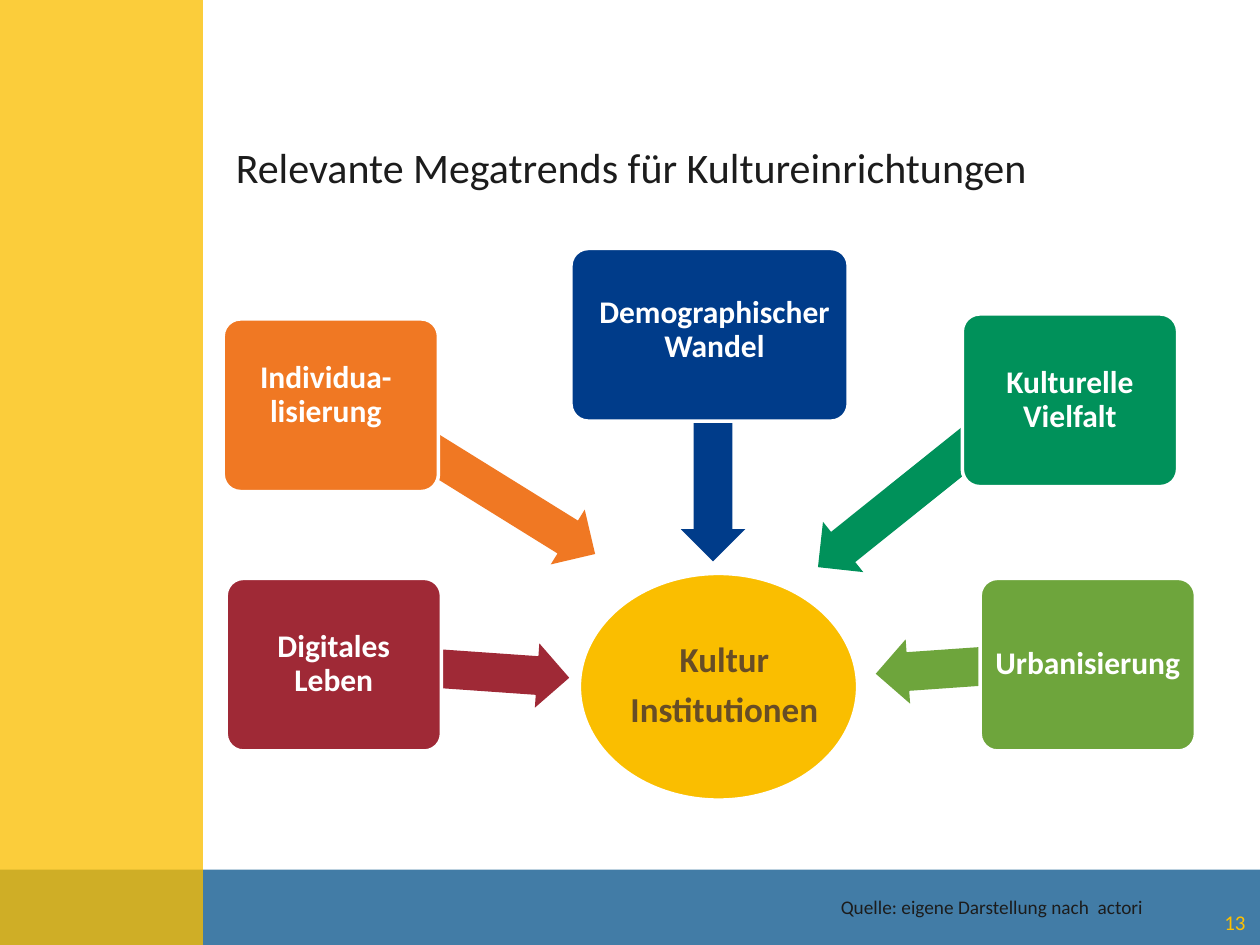
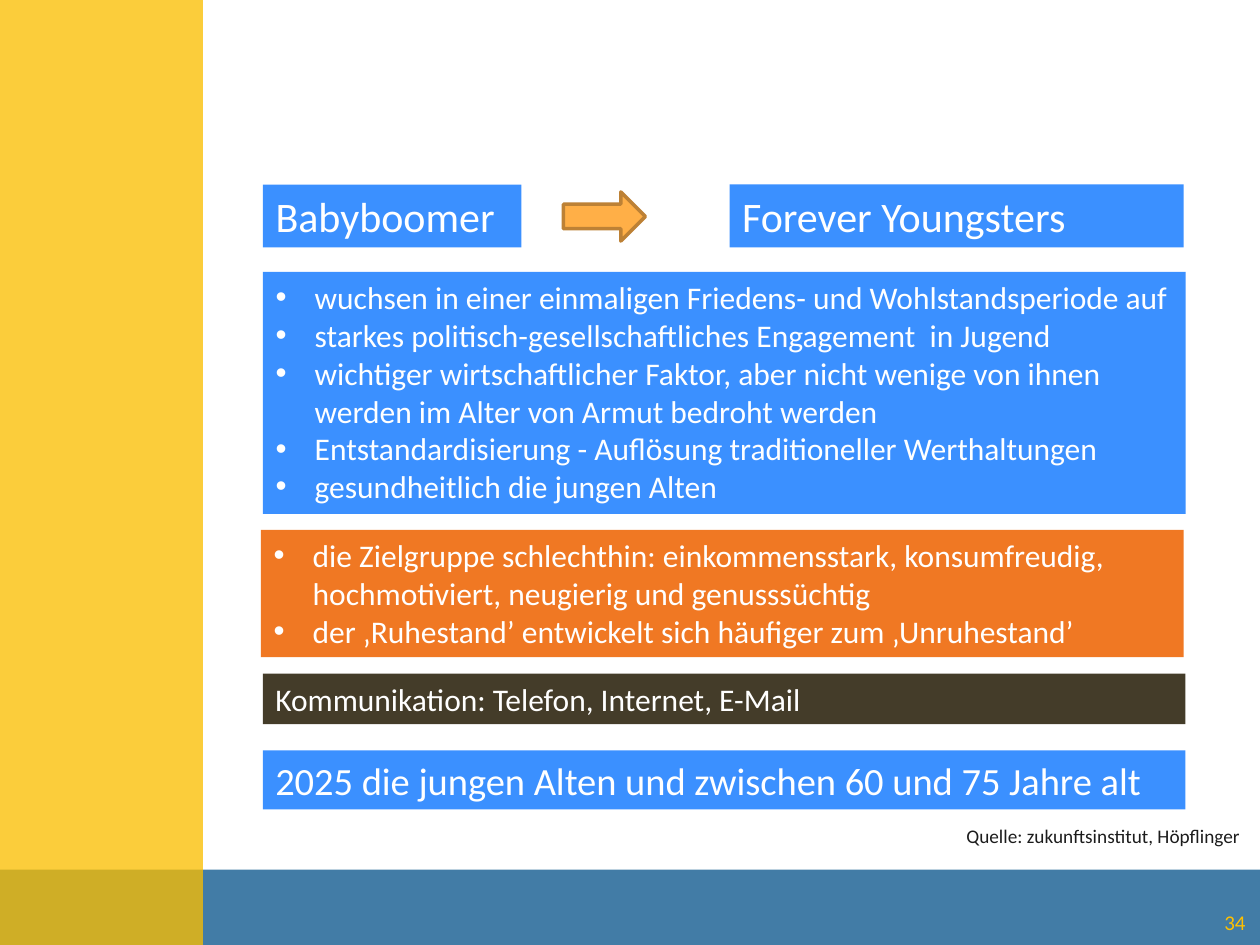
"""Build two German slides on megatrends and the baby boomer generation."""
from lxml import etree
from pptx import Presentation
from pptx.dml.color import RGBColor
from pptx.enum.shapes import MSO_SHAPE
from pptx.enum.text import MSO_ANCHOR, MSO_AUTO_SIZE, PP_ALIGN
from pptx.oxml.ns import qn
from pptx.util import Cm, Pt

RECTANGLE, ROUNDED, ELLIPSE = MSO_SHAPE.RECTANGLE, MSO_SHAPE.ROUNDED_RECTANGLE, MSO_SHAPE.OVAL
LEFT_ARROW, RIGHT_ARROW = MSO_SHAPE.LEFT_ARROW, MSO_SHAPE.RIGHT_ARROW
TOP, MIDDLE = MSO_ANCHOR.TOP, MSO_ANCHOR.MIDDLE
LEFT, CENTER, RIGHT = PP_ALIGN.LEFT, PP_ALIGN.CENTER, PP_ALIGN.RIGHT
NO_AUTOFIT = MSO_AUTO_SIZE.NONE

FONT = "Calibri"
WHITE, INK, GOLD, YELLOW, BROWN = "FFFFFF", "1C1C1C", "FFC000", "FABE00", "674D26"
BLUE, ORANGE, DARK = "3B90FF", "F07823", "443C29"
TITLE_ONLY_LAYOUT, TWO_CONTENT_LAYOUT = 5, 3

SLIDE_WIDTH, SLIDE_HEIGHT = 25.4, 19.05
BANDS = [
    ("0A558C", (0, 17.53, SLIDE_WIDTH, 1.52)),
    (YELLOW, (0, 0, 4.09, SLIDE_HEIGHT)),
]
BAND_ALPHA = 77000
PAGE_NUMBER_AREA = (19.44, 18.14, 5.92, 0.91)

MEGATRENDS_TITLE = "Relevante Megatrends für Kultureinrichtungen"
MEGATRENDS_SOURCE = "Quelle: eigene Darstellung nach  actori"
TREND_HEIGHT, TREND_ARROW_HEIGHT, TREND_INSET = 3.48, 1.3, 0.08
# Each trend: text, colour, box (left, top, width), text shift, arrow (left, top, length), angle
TRENDS = [
    ("Digitales Leben", "9F2936", (4.56, 11.66, 4.34), (0, 0), (7.67, 12.88, 3.81), 184),
    ("Individua-lisierung", ORANGE, (4.5, 6.43, 4.34), (-0.1, -0.2), (7.16, 9.14, 5.23), 211.8),
    ("Demographischer Wandel", "003C8A", (11.51, 5.01, 5.59), (0.1, -0.1), (12.37, 8.66, 4.01), 270),
    ("Kulturelle Vielfalt", "00915A", (19.4, 6.33, 4.34), (0, 0), (16.05, 9.53, 4.01), 321.3),
    ("Urbanisierung", "6EA53C", (19.76, 11.66, 4.34), (0, 0), (17.65, 12.8, 3.81), 356),
]
INSTITUTIONS = ["Kultur", "Institutionen"]
INSTITUTIONS_AREA = (11.68, 11.56, 5.61, 4.57)

PANEL_LEFT, PANEL_WIDTH = 5.3, 18.6
BOOMER_TITLE = "Babyboomer"
BOOMER_TITLE_AREA = (PANEL_LEFT, 3.72, 5.21, 1.27)
BOOMER_ARROW_AREA = (11.36, 3.87, 1.65, 0.99)
BOOMER_LISTS = [
    (BLUE, (PANEL_LEFT, 5.48, PANEL_WIDTH, 4.88), [
        "wuchsen in einer einmaligen Friedens- und Wohlstandsperiode auf",
        "starkes politisch-gesellschaftliches Engagement  in Jugend",
        "wichtiger wirtschaftlicher Faktor, aber nicht wenige von ihnen werden im Alter von Armut bedroht werden",
        "Entstandardisierung - Auflösung traditioneller Werthaltungen",
        "gesundheitlich die jungen Alten",
    ]),
    (ORANGE, (5.26, 10.68, PANEL_WIDTH, 2.57), [
        "die Zielgruppe schlechthin: einkommensstark, konsumfreudig, hochmotiviert, neugierig und genusssüchtig",
        "der ‚Ruhestand’ entwickelt sich häufiger zum ‚Unruhestand’",
    ]),
]
BOOMER_PANELS = [
    ("Forever Youngsters", BLUE, 24, (14.71, 3.72, 9.15, 1.27)),
    ("Kommunikation: Telefon, Internet, E-Mail", DARK, 18, (PANEL_LEFT, 13.58, PANEL_WIDTH, 1.02)),
    ("2025 die jungen Alten und zwischen 60 und 75 Jahre alt", BLUE, 22,
     (PANEL_LEFT, 15.13, PANEL_WIDTH, 1.19)),
]
BOOMER_SOURCE = "Quelle: zukunftsinstitut, Höpflinger"


def colour(value):
    return RGBColor.from_string(value)


def paint(shape, fill, line=None):
    shape.shadow.inherit = False
    shape.fill.solid()
    shape.fill.fore_color.rgb = colour(fill)
    if line:
        shape.line.color.rgb = colour(line)
        shape.line.width = Pt(2)
    else:
        shape.line.fill.background()


def place(shape, area):
    shape.left, shape.top, shape.width, shape.height = map(Cm, area)


def add_shape(slide, kind, area, fill, line=None):
    shape = slide.shapes.add_shape(kind, *map(Cm, area))
    paint(shape, fill, line)
    return shape


def write(shape, lines, size, text_colour, align=LEFT, anchor=TOP, bold=False, wrap=True):
    frame = shape.text_frame
    frame.text = "\n".join(lines)
    frame.auto_size = NO_AUTOFIT
    frame.word_wrap = wrap
    frame.vertical_anchor = anchor
    for paragraph in frame.paragraphs:
        paragraph.alignment = align
        paragraph.space_before = Pt(0)
        for run in paragraph.runs:
            run.font.name = FONT
            run.font.size = Pt(size)
            run.font.bold = bold
            run.font.color.rgb = colour(text_colour)


def set_insets(shape, inset, shift):
    across, down = shift
    frame = shape.text_frame
    frame.margin_left = Cm(inset + max(0, 2 * across))
    frame.margin_right = Cm(inset + max(0, -2 * across))
    frame.margin_top = Cm(inset + max(0, 2 * down))
    frame.margin_bottom = Cm(inset + max(0, -2 * down))


def indent_bullets(shape):
    for paragraph in shape.text_frame.paragraphs:
        properties = paragraph._p.get_or_add_pPr()
        properties.set("marL", str(Cm(0.79)))
        properties.set("indent", str(-Cm(0.79)))


def add_text(slide, area, text, size, text_colour, **options):
    box = slide.shapes.add_textbox(*map(Cm, area))
    write(box, [text], size, text_colour, **options)


def add_frame(slide, page_number):
    for fill, area in BANDS:
        band = add_shape(slide, RECTANGLE, area, fill)
        fill_colour = band.element.xpath("./p:spPr/a:solidFill/a:srgbClr")[0]
        etree.SubElement(fill_colour, qn("a:alpha")).set("val", str(BAND_ALPHA))
    add_text(slide, PAGE_NUMBER_AREA, page_number, 12, GOLD, align=RIGHT, anchor=MIDDLE)


def build_megatrends(slide):
    add_frame(slide, "13")
    title = slide.shapes.title
    place(title, (4.5, 2.72, 16.61, 1.27))
    write(title, [MEGATRENDS_TITLE], 24, INK, wrap=False)
    for _, fill, _, _, (left, top, length), angle in TRENDS:
        arrow = add_shape(slide, LEFT_ARROW, (left, top, length, TREND_ARROW_HEIGHT), fill)
        arrow.adjustments[0] = 0.6
        arrow.rotation = angle
    for text, fill, box, shift, _, _ in TRENDS:
        trend = add_shape(slide, ROUNDED, (*box, TREND_HEIGHT), fill, WHITE)
        trend.adjustments[0] = 0.1
        write(trend, [text], 18, WHITE, CENTER, MIDDLE, bold=True)
        trend.text_frame.paragraphs[0].line_spacing = 0.9
        set_insets(trend, TREND_INSET, shift)
    institutions = add_shape(slide, ELLIPSE, INSTITUTIONS_AREA, YELLOW, WHITE)
    write(institutions, INSTITUTIONS, 20, BROWN, CENTER, MIDDLE, bold=True, wrap=False)
    set_insets(institutions, 0.03, (0.12, -0.02))
    for paragraph in institutions.text_frame.paragraphs:
        paragraph.line_spacing = 0.9
    institutions.text_frame.paragraphs[0].space_after = Pt(7)
    add_text(slide, (16.7, 17.93, 6.65, 0.74), MEGATRENDS_SOURCE, 11, INK, wrap=False)


def build_boomers(slide):
    title, *bodies = slide.placeholders
    add_frame(slide, "34")
    place(title, BOOMER_TITLE_AREA)
    paint(title, BLUE)
    write(title, [BOOMER_TITLE], 24, WHITE)
    for body, (fill, area, lines) in zip(bodies, BOOMER_LISTS):
        place(body, area)
        paint(body, fill)
        write(body, lines, 18, WHITE)
        indent_bullets(body)
    add_shape(slide, RIGHT_ARROW, BOOMER_ARROW_AREA, "FFAF47", "BD8135")
    for text, fill, size, area in BOOMER_PANELS:
        write(add_shape(slide, RECTANGLE, area, fill), [text], size, WHITE)
    add_text(slide, (19.23, 16.49, 6.15, 0.74), BOOMER_SOURCE, 11, INK, wrap=False)


def main():
    presentation = Presentation()
    presentation.slide_width, presentation.slide_height = Cm(SLIDE_WIDTH), Cm(SLIDE_HEIGHT)
    layouts = presentation.slide_layouts
    build_megatrends(presentation.slides.add_slide(layouts[TITLE_ONLY_LAYOUT]))
    build_boomers(presentation.slides.add_slide(layouts[TWO_CONTENT_LAYOUT]))
    presentation.save("out.pptx")


if __name__ == "__main__":
    main()
